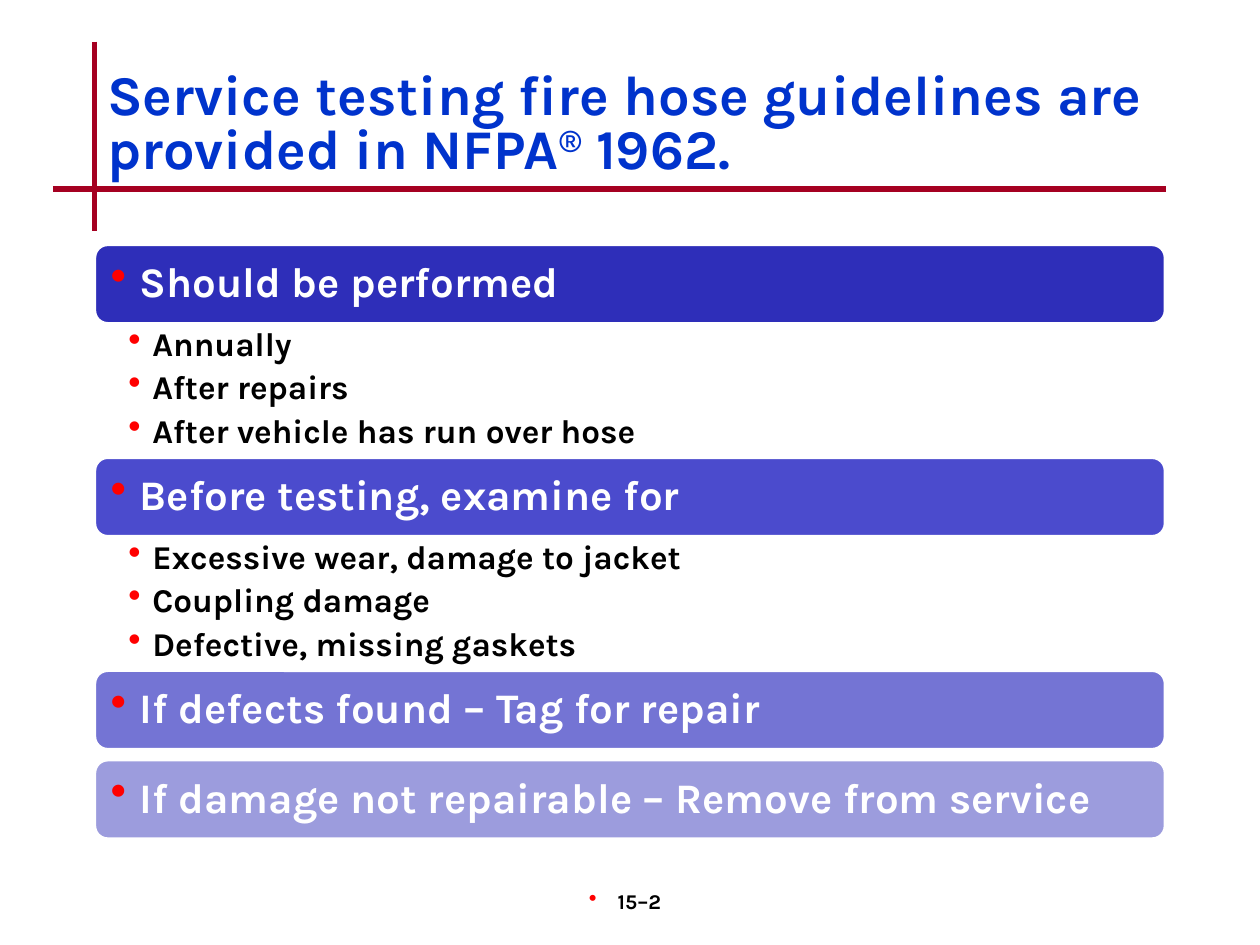
from dataclasses import dataclass

from lxml import etree
from pptx import Presentation
from pptx import util as u
from pptx.dml.color import RGBColor
from pptx.enum import shapes, text
from pptx.oxml import ns


@dataclass(frozen=True)
class Theme:
    font: str = "Karla"
    title: str = "0033CC"
    rule: str = "A50021"
    bullet: str = "FF0000"
    light: str = "FFFFFF"
    dark: str = "000000"
    bars: tuple = ("2E2EB9", "4B4BCD", "7474D4", "9C9CDD")
    title_size: int = 32
    bar_size: int = 24
    item_size: int = 19
    number_size: int = 12


THEME = Theme()
WIDTH, HEIGHT = 10, 7.5
LEFT, SPAN = 0.075 * WIDTH, 0.85 * WIDTH
RULE_Y = 0.2 * HEIGHT
LIST_TOP = 1.94
BAR_H, ITEMS_H, GAP = 0.63, 1.06, 0.08
HANG = 0.23

SECTIONS = [
    ("Should be performed",
     ["Annually", "After repairs", "After vehicle has run over hose"]),
    ("Before testing, examine for",
     ["Excessive wear, damage to jacket", "Coupling damage",
      "Defective, missing gaskets"]),
    ("If defects found – Tag for repair", []),
    ("If damage not repairable – Remove from service", []),
]


def apply(obj, values):
    for name, value in values.items():
        setattr(obj, name, value)


def style_font(font, size, color):
    apply(font, {"name": THEME.font, "size": u.Pt(size), "bold": True})
    font.color.rgb = RGBColor.from_string(color)


def set_frame(tf, insets=(0.1, 0.05, 0.1, 0.05),
              anchor=text.MSO_ANCHOR.TOP):
    sides = ("margin_left", "margin_top", "margin_right", "margin_bottom")
    apply(tf, dict(zip(sides, map(u.Inches, insets))))
    apply(tf, {"word_wrap": True, "auto_size": text.MSO_AUTO_SIZE.NONE,
               "vertical_anchor": anchor})


def add_bullet(p, hang):
    pPr = p._p.get_or_add_pPr()
    pPr.set("marL", str(u.Inches(hang)))
    pPr.set("indent", str(-u.Inches(hang)))
    color = etree.SubElement(pPr, ns.qn("a:buClr"))
    etree.SubElement(color, ns.qn("a:srgbClr"), val=THEME.bullet)
    etree.SubElement(pPr, ns.qn("a:buSzPct"), val="110000")
    etree.SubElement(pPr, ns.qn("a:buChar"), char="•")


def write_bullets(tf, lines, size, color, hang=HANG, **formats):
    for i, line in enumerate(lines):
        p = tf.paragraphs[0] if i == 0 else tf.add_paragraph()
        apply(p, {"alignment": text.PP_ALIGN.LEFT, **formats})
        add_bullet(p, hang)
        r = p.add_run()
        r.text = line
        style_font(r.font, size, color)


def add_rule(slide, x1, y1, x2, y2):
    line = slide.shapes.add_connector(
        shapes.MSO_CONNECTOR.STRAIGHT, *map(u.Inches, (x1, y1, x2, y2)))
    line.line.color.rgb = RGBColor.from_string(THEME.rule)
    line.line.width = u.Pt(3)
    etree.SubElement(line._element.spPr, ns.qn("a:effectLst"))


def add_title(slide):
    sp = slide.shapes.title
    box = (LEFT, RULE_Y - 1, SPAN, 1)
    apply(sp, dict(zip(("left", "top", "width", "height"),
                       map(u.Inches, box))))
    set_frame(sp.text_frame, anchor=text.MSO_ANCHOR.MIDDLE)
    p = sp.text_frame.paragraphs[0]
    apply(p, {"alignment": text.PP_ALIGN.LEFT, "line_spacing": 0.8})
    for words, raised in (
            ("Service testing fire hose guidelines are provided in NFPA", False),
            ("®", True), (" 1962.", False)):
        r = p.add_run()
        r.text = words
        style_font(r.font, THEME.title_size, THEME.title)
        if raised:
            r.font._element.set("baseline", "30000")


def add_bar(slide, y, heading, fill):
    sp = slide.shapes.add_shape(
        shapes.MSO_SHAPE.ROUNDED_RECTANGLE,
        *map(u.Inches, (LEFT, y, SPAN, BAR_H)))
    sp.shadow.inherit = False
    sp.fill.solid()
    sp.fill.fore_color.rgb = RGBColor.from_string(fill)
    sp.line.color.rgb = RGBColor.from_string(THEME.light)
    sp.line.width = u.Pt(2)
    set_frame(sp.text_frame, (0.1, 0.1, 0.1, 0.1), text.MSO_ANCHOR.MIDDLE)
    write_bullets(sp.text_frame, [heading], THEME.bar_size, THEME.light,
                  line_spacing=0.9)


def add_items(slide, y, items):
    sp = slide.shapes.add_textbox(
        *map(u.Inches, (LEFT, y, SPAN, ITEMS_H)))
    set_frame(sp.text_frame, (0.27, 0.03, 0.19, 0.03))
    write_bullets(sp.text_frame, items, THEME.item_size, THEME.dark, 0.19,
                  line_spacing=0.9, space_after=u.Pt(4.4))


def add_sections(slide):
    y = LIST_TOP
    for (heading, items), fill in zip(SECTIONS, THEME.bars):
        add_bar(slide, y, heading, fill)
        y += BAR_H
        if items:
            add_items(slide, y, items)
        y += ITEMS_H if items else GAP


def add_number(slide):
    sp = slide.shapes.add_textbox(
        *map(u.Inches, (3.92, HEIGHT - 0.5, 2.08, 0.5)))
    set_frame(sp.text_frame)
    write_bullets(sp.text_frame, ["15–2"], THEME.number_size, THEME.dark,
                  alignment=text.PP_ALIGN.CENTER)


def main():
    prs = Presentation()
    prs.slide_width, prs.slide_height = u.Inches(WIDTH), u.Inches(HEIGHT)
    slide = prs.slides.add_slide(prs.slide_layouts[5])
    add_rule(slide, LEFT, 0.33, LEFT, 1.83)
    add_rule(slide, 0.42, RULE_Y, LEFT + SPAN, RULE_Y)
    add_sections(slide)
    add_title(slide)
    add_number(slide)
    prs.save("out.pptx")


if __name__ == "__main__":
    main()
